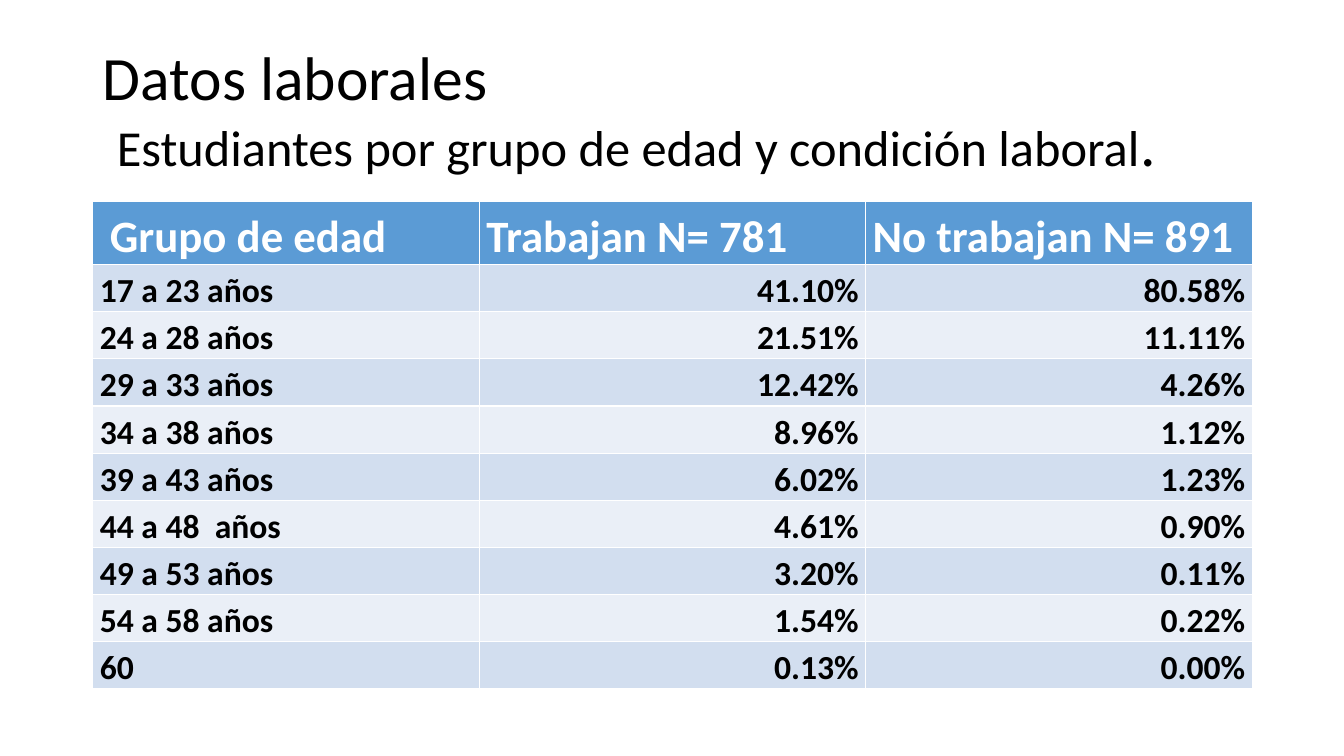
from dataclasses import dataclass

import pptx
import pptx.dml.color
import pptx.enum.text
import pptx.util

Inches = pptx.util.Inches
Pt = pptx.util.Pt
ALIGN = pptx.enum.text.PP_ALIGN
ANCHOR = pptx.enum.text.MSO_ANCHOR


@dataclass(frozen=True)
class Theme:
    font: str = "Calibri"
    text: str = "000000"
    header_text: str = "FFFFFF"
    header_fill: str = "5B9BD5"
    bands: tuple = ("D2DEEF", "EAEFF7")
    title_size: int = 44
    subtitle_size: int = 36
    header_size: int = 32
    body_size: int = 24


THEME = Theme()
LEFT, WIDTH = Inches(0.92), Inches(11.5)

HEADER = (" Grupo de edad", "Trabajan N= 781", "No trabajan N= 891")
AGE_GROUPS = (
    ("17 a 23 años", 41.10, 80.58),
    ("24 a 28 años", 21.51, 11.11),
    ("29 a 33 años", 12.42, 4.26),
    ("34 a 38 años", 8.96, 1.12),
    ("39 a 43 años", 6.02, 1.23),
    ("44 a 48  años", 4.61, 0.90),
    ("49 a 53 años", 3.20, 0.11),
    ("54 a 58 años", 1.54, 0.22),
    ("60", 0.13, 0.00),
)


def rgb(value):
    return pptx.dml.color.RGBColor.from_string(value)


def add_text(p, text, size, color=THEME.text, bold=False):
    r = p.add_run()
    r.text = text
    r.font.name = THEME.font
    r.font.size = Pt(size)
    r.font.bold = bold
    r.font.color.rgb = rgb(color)


def add_title(slide):
    sp = slide.shapes.title
    sp.left, sp.top, sp.width, sp.height = LEFT, Inches(0.4), WIDTH, Inches(1.45)
    tf = sp.text_frame
    tf.auto_size = pptx.enum.text.MSO_AUTO_SIZE.NONE
    tf.vertical_anchor = ANCHOR.MIDDLE
    p = tf.paragraphs[0]
    p.alignment = ALIGN.LEFT
    p.line_spacing = 0.9
    add_text(p, "Datos laborales", THEME.title_size)
    p.add_line_break()
    add_text(p, " ", THEME.title_size)
    add_text(p, "Estudiantes por grupo de edad y condición laboral", THEME.subtitle_size)
    add_text(p, ".", THEME.title_size)


def fill_cell(cell, text, fill, align=ALIGN.LEFT, **text_format):
    cell.fill.solid()
    cell.fill.fore_color.rgb = rgb(fill)
    cell.margin_left = cell.margin_right = Inches(0.07)
    cell.margin_top = cell.margin_bottom = 0
    p = cell.text_frame.paragraphs[0]
    p.alignment = align
    p.line_spacing = 1.15
    add_text(p, text, bold=True, **text_format)


def add_age_table(slide):
    rows = len(AGE_GROUPS) + 1
    frame = slide.shapes.add_table(rows, len(HEADER), LEFT, Inches(2), WIDTH, Inches(4.75))
    table = frame.table
    for row in table.rows:
        row.height = Inches(0.41)
    for col, label in enumerate(HEADER):
        fill_cell(table.cell(0, col), label, THEME.header_fill,
                  size=THEME.header_size, color=THEME.header_text)
    for i, (group, *shares) in enumerate(AGE_GROUPS):
        band = THEME.bands[i % 2]
        fill_cell(table.cell(i + 1, 0), group, band, size=THEME.body_size)
        for col, share in enumerate(shares, start=1):
            fill_cell(table.cell(i + 1, col), f"{share:.2f}%", band,
                      align=ALIGN.RIGHT, size=THEME.body_size)


def main():
    prs = pptx.Presentation()
    prs.slide_width, prs.slide_height = Inches(13.33), Inches(7.5)
    slide = prs.slides.add_slide(prs.slide_layouts.get_by_name("Title Only"))
    add_title(slide)
    add_age_table(slide)
    prs.save("out.pptx")


if __name__ == "__main__":
    main()
